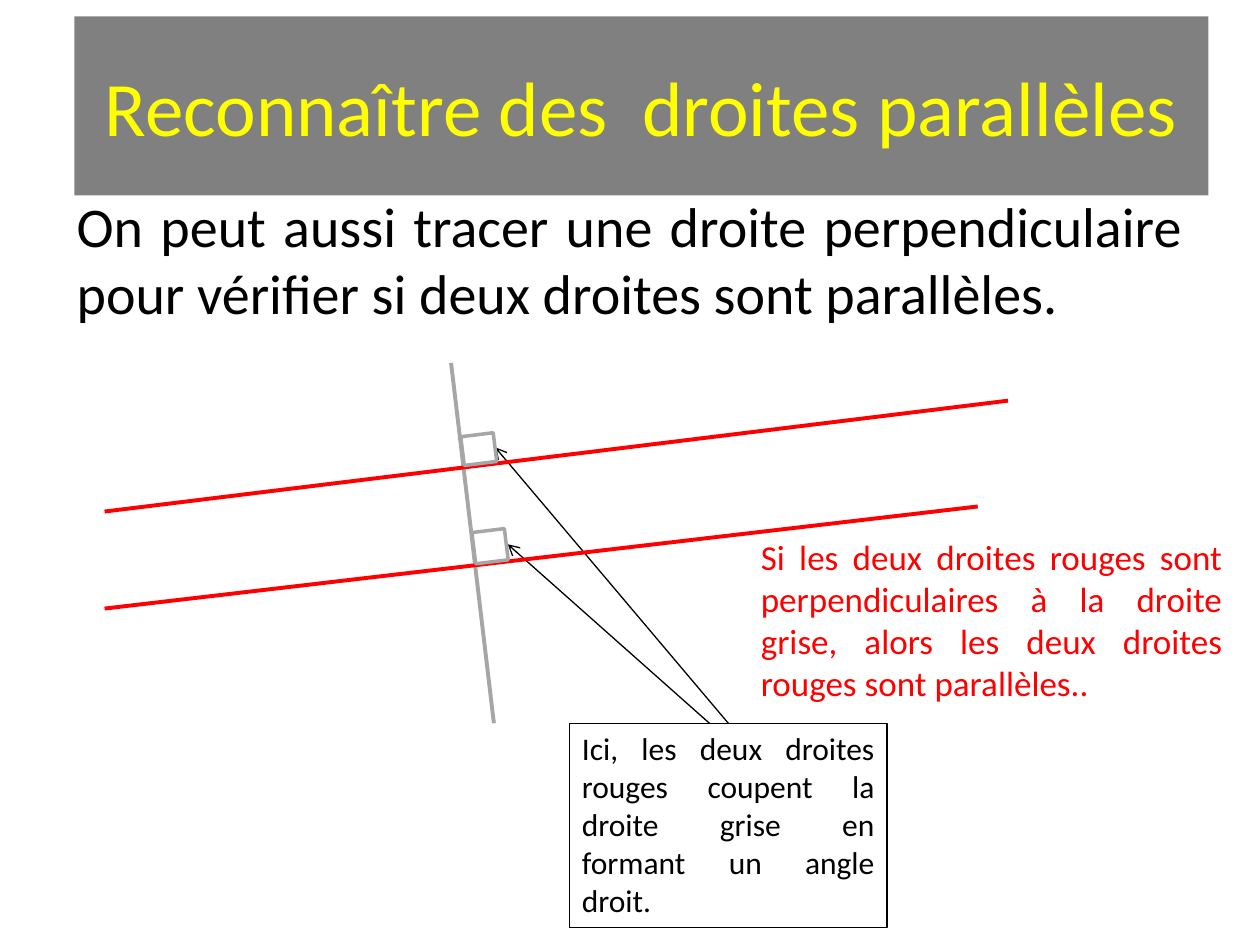
from lxml import etree
from pptx import Presentation
from pptx.dml.color import RGBColor
from pptx.enum.shapes import MSO_CONNECTOR, MSO_SHAPE
from pptx.enum.text import MSO_ANCHOR, PP_ALIGN
from pptx.oxml.ns import qn
from pptx.util import Inches, Pt

COLORS = {
    "banner": "808080",
    "title": "FFFF00",
    "black": "000000",
    "red": "FF0000",
    "gray": "A6A6A6",
    "white": "FFFFFF",
}


def rgb(name):
    return RGBColor.from_string(COLORS[name])


def add_rect(s, x, y, w, h, fill=None, line=None, width=0.75, rotation=0):
    sp = s.shapes.add_shape(MSO_SHAPE.RECTANGLE, Inches(x), Inches(y), Inches(w), Inches(h))
    sp.shadow.inherit = False
    sp.rotation = rotation
    if fill:
        sp.fill.solid()
        sp.fill.fore_color.rgb = rgb(fill)
    else:
        sp.fill.background()
    if line:
        sp.line.color.rgb = rgb(line)
        sp.line.width = Pt(width)
    else:
        sp.line.fill.background()
    return sp


def write(sp, text, size, color, align=PP_ALIGN.JUSTIFY, anchor=MSO_ANCHOR.TOP):
    tf = sp.text_frame
    tf.word_wrap = True
    tf.vertical_anchor = anchor
    tf.text = text
    p = tf.paragraphs[0]
    p.alignment = align
    font = p.runs[0].font
    font.name = "Calibri"
    font.size = Pt(size)
    font.color.rgb = rgb(color)


def add_text(s, x, y, w, h, text, size, color):
    sp = s.shapes.add_textbox(Inches(x), Inches(y), Inches(w), Inches(h))
    write(sp, text, size, color)


def add_line(s, start, end, color, width, arrow=False):
    line = s.shapes.add_connector(MSO_CONNECTOR.STRAIGHT, *map(Inches, start + end))
    line.line.color.rgb = rgb(color)
    line.line.width = Pt(width)
    if arrow:
        etree.SubElement(line.line._get_or_add_ln(), qn("a:tailEnd"), type="arrow")
    etree.SubElement(line._element.spPr, qn("a:effectLst"))
    return line


def main():
    prs = Presentation()
    prs.slide_width, prs.slide_height = Inches(10), Inches(7.5)
    s = prs.slides.add_slide(prs.slide_layouts[6])

    banner = add_rect(s, 0.59, 0.13, 9, 1.42, fill="banner")
    write(banner, "Reconnaître des  droites parallèles", 44, "title",
          PP_ALIGN.CENTER, MSO_ANCHOR.MIDDLE)
    add_text(s, 0.51, 1.47, 8.98, 1.18,
             "On peut aussi tracer une droite perpendiculaire pour vérifier "
             "si deux droites sont parallèles.", 32, "black")

    add_line(s, (3.92, 5.74), (3.58, 2.88), "gray", 2.25)
    add_text(s, 5.94, 4.2, 3.86, 1.45,
             "Si les deux droites rouges sont perpendiculaires à la droite grise, "
             "alors les deux droites rouges sont parallèles..", 20, "red")

    note = add_rect(s, 4.52, 5.74, 2.52, 1.62, line="black")
    write(note, "Ici, les deux droites rouges coupent la droite grise "
                "en formant un angle droit.", 18, "black")
    add_line(s, (5.63, 5.74), (4.03, 4.32), "black", 0.75, arrow=True)
    upper_arrow = add_line(s, (5.78, 5.74), (3.93, 3.55), "black", 0.75, arrow=True)
    upper_arrow.begin_connect(note, 0)

    for start, end in (((0.83, 4.06), (8, 3.18)), ((0.83, 4.83), (7.76, 4.02))):
        add_line(s, start, end, "red", 2.25)
    for x, y, h in ((3.67, 3.45, 0.23), (3.76, 4.21, 0.25)):
        add_rect(s, x, y, 0.26, h, fill="white", line="gray", width=2, rotation=353)

    prs.save("out.pptx")


if __name__ == "__main__":
    main()
